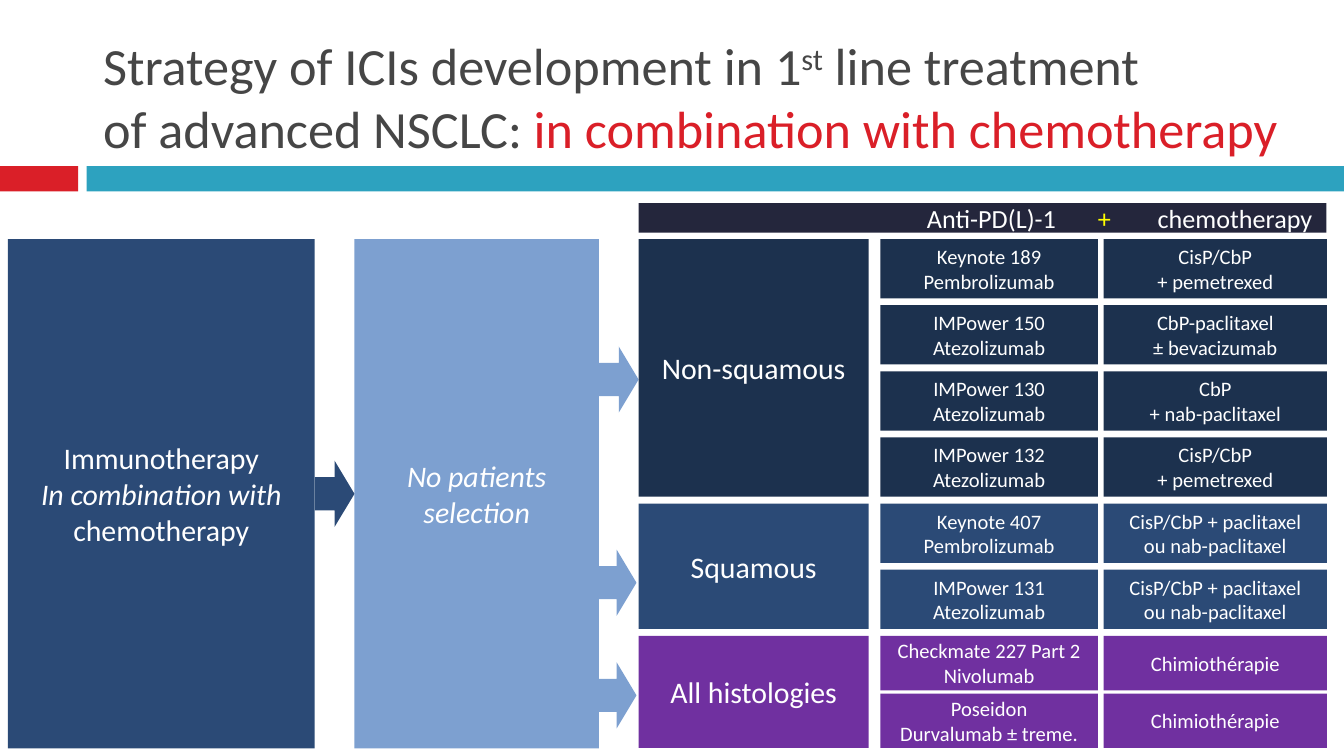
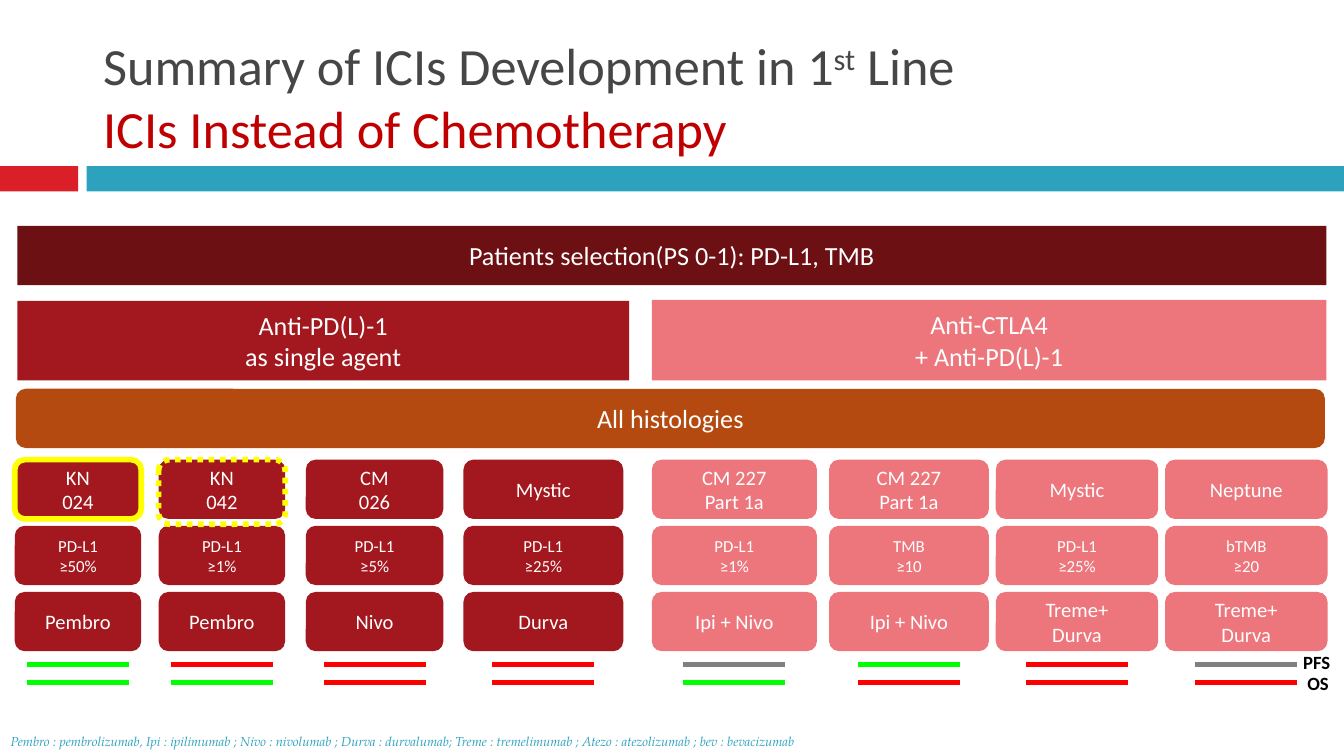
from collections import namedtuple

from lxml.etree import SubElement
from pptx import Presentation
from pptx.dml.color import RGBColor
from pptx.enum.dml import MSO_LINE
from pptx.enum.shapes import MSO_CONNECTOR, MSO_SHAPE as Preset
from pptx.enum.text import MSO_ANCHOR as Anchor, MSO_AUTO_SIZE as AutoSize, PP_ALIGN as Align
from pptx.oxml.ns import qn
from pptx.util import Cm, Pt

Box = namedtuple("Box", "left top width height")
Run = namedtuple("Run", "text color raised", defaults=("title", False))

COLORS = {
    "title": "464646", "red": "DA1F28", "teal": "2DA2BF", "dark_red": "C00000",
    "white": "FFFFFF", "black": "000000", "yellow": "FFFF00",
    "header": "24263C", "navy": "1C314E", "blue": "2B4A76",
    "light_blue": "7DA0D0", "purple": "7030A0", "maroon": "6D1014",
    "crimson": "A3171E", "pink": "EC767C", "orange": "B54A10",
    "positive": "00FF00", "negative": "FF0000", "untested": "808080",
}
FONT = "Calibri"
FOOTNOTE_FONT = "TeX Gyre Pagella"
ROW_HEIGHT = 1.12
ROW_PITCH = 1.25

HISTOLOGIES = [
    ("Non-squamous", "navy", ROW_HEIGHT, ROW_PITCH, [
        ("Keynote 189\nPembrolizumab", "CisP/CbP\n+ pemetrexed"),
        ("IMPower 150\nAtezolizumab", "CbP-paclitaxel\n± bevacizumab"),
        ("IMPower 130\nAtezolizumab", "CbP\n+ nab-paclitaxel"),
        ("IMPower 132\nAtezolizumab", "CisP/CbP\n+ pemetrexed"),
    ]),
    ("Squamous", "blue", ROW_HEIGHT, ROW_PITCH, [
        ("Keynote 407\nPembrolizumab", "CisP/CbP + paclitaxel\nou nab-paclitaxel"),
        ("IMPower 131\nAtezolizumab", "CisP/CbP + paclitaxel\nou nab-paclitaxel"),
    ]),
    ("All histologies", "purple", 1.03, 1.09, [
        ("Checkmate 227 Part 2\nNivolumab", "Chimiothérapie"),
        ("Poseidon\nDurvalumab ± treme.", "Chimiothérapie"),
    ]),
]

TRIALS = [
    (0.28, 2.39, "crimson", "KN\n024", "PD-L1\n≥50%", "Pembro", "positive", "positive"),
    (3.0, 2.39, "crimson", "KN\n042", "PD-L1\n≥1%", "Pembro", "negative", "positive"),
    (5.78, 2.6, "crimson", "CM\n026", "PD-L1\n≥5%", "Nivo", "negative", "negative"),
    (8.76, 3.02, "crimson", "Mystic", "PD-L1\n≥25%", "Durva", "negative", "negative"),
    (12.32, 3.12, "pink", "CM 227\nPart 1a", "PD-L1\n≥1%", "Ipi + Nivo", "untested", "positive"),
    (15.67, 3.02, "pink", "CM 227\nPart 1a", "TMB\n≥10", "Ipi + Nivo", "positive", "negative"),
    (18.82, 3.07, "pink", "Mystic", "PD-L1\n≥25%", "Treme+\nDurva", "negative", "negative"),
    (22.02, 3.07, "pink", "Neptune", "bTMB\n≥20", "Treme+\nDurva", "untested", "negative"),
]


def rgb(name):
    """Return the named colour."""
    return RGBColor.from_string(COLORS[name])


def set_font(font, size, color, name=FONT, bold=False, italic=False):
    """Apply one text style."""
    font.name, font.size = name, Pt(size)
    font.bold, font.italic = bold, italic
    font.color.rgb = rgb(color)


def add_block(slide, box, fill, text="", size=11, preset=Preset.RECTANGLE, italic_lines=()):
    """Add a filled shape with centred white lines of text."""
    shape = slide.shapes.add_shape(preset, *map(Cm, box))
    shape.shadow.inherit = False
    shape.line.fill.background()
    if fill:
        shape.fill.solid()
        shape.fill.fore_color.rgb = rgb(fill)
    else:
        shape.fill.background()
    frame = shape.text_frame
    frame.word_wrap = True
    frame.vertical_anchor = Anchor.MIDDLE
    if text:
        for index, line in enumerate(text.split("\n")):
            paragraph = frame.add_paragraph() if index else frame.paragraphs[0]
            paragraph.text = line
            paragraph.alignment = Align.CENTER
            set_font(paragraph.font, size, "white", italic=index in italic_lines)
    return shape


def add_label(slide, box, text, size, color, wrap=True, **style):
    """Add a one-paragraph text box and return its frame."""
    frame = slide.shapes.add_textbox(*map(Cm, box)).text_frame
    frame.word_wrap = wrap
    frame.paragraphs[0].text = text
    set_font(frame.paragraphs[0].font, size, color, **style)
    return frame


def add_runs(paragraph, runs):
    """Append coloured, optionally superscript runs."""
    for part in runs:
        run = paragraph.add_run()
        run.text = part.text
        run.font.color.rgb = rgb(part.color)
        if part.raised:
            run.font._element.set("baseline", "30000")


def add_heading(slide, box, lines):
    """Add the two-line title and the bands that close the heading."""
    for left, width, color in [(0, 1.48, "red"), (1.64, 23.76, "teal")]:
        add_block(slide, Box(box.left + left, box.top + 3.14, width, 0.48), color)
    frame = add_label(slide, Box(box.left + 1.7, box.top + 0.33, box.width - 2, 2.8),
                      "", 28, "title")
    frame.vertical_anchor = Anchor.BOTTOM
    paragraph = frame.paragraphs[0]
    for index, runs in enumerate(lines):
        if index:
            paragraph.add_line_break()
        add_runs(paragraph, runs)


def add_strategy(slide, box):
    """Add the strategy columns and the arrows leading to the histologies."""
    selection_left = box.left + 6.55
    add_block(slide, Box(box.left, box.top, 5.8, box.height), "blue",
              "Immunotherapy\nIn combination with\nchemotherapy", 16, italic_lines=(1,))
    add_block(slide, Box(selection_left, box.top, 4.62, box.height), "light_blue",
              "No patients selection", 16, italic_lines=(0,))
    arrows = [(5.8, 4.19, "blue"), (11.17, 2.03, "light_blue"),
              (11.13, 5.87, "light_blue"), (11.13, 8.0, "light_blue")]
    for left, top, color in arrows:
        add_block(slide, Box(box.left + left, box.top + top, 0.75, 1.25), color,
                  preset=Preset.RIGHT_ARROW)


def add_combination_header(slide, box):
    """Add the strip naming the two combined treatments."""
    frame = add_block(slide, box, "header").text_frame
    frame.margin_right = 0
    paragraph = frame.paragraphs[0]
    paragraph.alignment = Align.LEFT
    stops = SubElement(paragraph._p.get_or_add_pPr(), qn("a:tabLst"))
    for position in (5.2, 8.43, 9.56):
        SubElement(stops, qn("a:tab"), pos=str(Cm(position)), algn="l")
    set_font(paragraph.font, 14, "white")
    add_runs(paragraph, [Run("\tAnti-PD(L)-1", "white"), Run("\t+", "yellow"),
                         Run("\tchemotherapy", "white")])


def add_histologies(slide, box):
    """Add each histology with its trials and chemotherapies."""
    trial_left, chemotherapy_left = box.left + 4.57, box.left + 8.79
    top = box.top
    for name, color, height, pitch, rows in HISTOLOGIES:
        group_height = pitch * (len(rows) - 1) + height
        add_block(slide, Box(box.left, top, 4.35, group_height), color, name, 16)
        for index, (trial, chemotherapy) in enumerate(rows):
            row_top = top + index * pitch
            add_block(slide, Box(trial_left, row_top, 4.11, height), color, trial)
            add_block(slide, Box(chemotherapy_left, row_top, 4.22, height),
                      color, chemotherapy)
        top += len(rows) * pitch


def add_approaches(slide, box):
    """Add the selection, treatment and histology bars."""
    bars = [
        (0, 0, box.width, 1.12, "maroon", "Patients selection(PS 0-1): PD-L1, TMB", Preset.RECTANGLE),
        (0, 1.42, 11.56, 1.5, "crimson", "Anti-PD(L)-1\nas single agent", Preset.RECTANGLE),
        (11.99, 1.4, 12.75, 1.52, "pink", "Anti-CTLA4\n+ Anti-PD(L)-1", Preset.RECTANGLE),
        (-0.03, 3.08, box.width, 1.12, "orange", "All histologies", Preset.ROUNDED_RECTANGLE),
    ]
    for left, top, width, height, color, text, preset in bars:
        add_block(slide, Box(box.left + left, box.top + top, width, height),
                  color, text, 14, preset)


def add_outcome(slide, left, top, length, color):
    """Add a coloured result line."""
    line = slide.shapes.add_connector(MSO_CONNECTOR.STRAIGHT, Cm(left), Cm(top),
                                      Cm(left + length), Cm(top))
    line.line.color.rgb = rgb(color)
    line.line.width = Pt(3)
    SubElement(line._element.spPr, qn("a:effectLst"))


def add_highlight(slide, box, dash):
    """Add a yellow frame around a trial."""
    frame = add_block(slide, box, None, preset=Preset.ROUNDED_RECTANGLE)
    frame.line.color.rgb = rgb("yellow")
    frame.line.width = Pt(3)
    frame.line.dash_style = dash


def add_trials(slide, box):
    """Add the trial columns with their survival results."""
    length = 1.93
    for left, width, color, trial, marker, drug, progression, survival in TRIALS:
        column_left = box.left + left
        for row, (text, size) in enumerate([(trial, 11), (marker, 9), (drug, 11)]):
            add_block(slide, Box(column_left, box.top + row * ROW_PITCH, width, ROW_HEIGHT),
                      color, text, size, Preset.ROUNDED_RECTANGLE)
        for top, outcome in [(3.87, progression), (4.21, survival)]:
            add_outcome(slide, column_left + (width - length) / 2, box.top + top,
                        length, outcome)
    for trial, height, dash in [(TRIALS[0], ROW_HEIGHT, MSO_LINE.SOLID),
                                (TRIALS[1], 1.22, MSO_LINE.ROUND_DOT)]:
        add_highlight(slide, Box(box.left + trial[0], box.top, trial[1], height), dash)
    for text, left, top, width in [("PFS", 24.38, 3.48, 1.04), ("OS", 24.46, 3.88, 0.91)]:
        frame = add_label(slide, Box(box.left + left, box.top + top, width, 0.68),
                          text, 10, "black", wrap=False, bold=True)
        frame.auto_size = AutoSize.SHAPE_TO_FIT_TEXT


def add_abbreviations(slide, box):
    """Add the footnote explaining the drug abbreviations."""
    frame = add_label(
        slide, box,
        "Pembro : pembrolizumab, Ipi : ipilimumab ; Nivo : nivolumab ; "
        "Durva : durvalumab; Treme : tremelimumab ; Atezo : atezolizumab ; "
        "bev : bevacizumab",
        7, "teal", name=FOOTNOTE_FONT, italic=True)
    frame.vertical_anchor = Anchor.BOTTOM
    frame.margin_left = frame.margin_right = frame.margin_bottom = Cm(0.2)
    frame.margin_top = Cm(0.1)
    frame.paragraphs[0].line_spacing = 0.8


def build_combination_slide(slide, page):
    """Build the slide on immunotherapy combined with chemotherapy."""
    add_heading(slide, page, [
        [Run("Strategy of ICIs development in 1"), Run("st", raised=True),
         Run(" line treatment")],
        [Run("of advanced NSCLC: "), Run("in combination with chemotherapy", "red")],
    ])
    add_strategy(slide, Box(0.15, 4.52, 11.88, 9.63))
    add_combination_header(slide, Box(12.07, 3.84, 13, 0.56))
    add_histologies(slide, Box(12.07, 4.52, 13, 9.63))


def build_replacement_slide(slide, page):
    """Build the slide on immunotherapy replacing chemotherapy."""
    add_heading(slide, page, [
        [Run("Summary of ICIs Development in 1"), Run("st", raised=True), Run(" Line")],
        [Run("ICIs Instead of Chemotherapy", "dark_red")],
    ])
    add_approaches(slide, Box(0.33, 4.27, 24.74, 4.2))
    add_trials(slide, Box(0, 8.69, page.width, 4.56))
    add_abbreviations(slide, Box(0, 13.89, page.width, 0.43))


def main():
    """Create and save the presentation."""
    presentation = Presentation()
    page = Box(0, 0, 25.4, 14.29)
    presentation.slide_width, presentation.slide_height = Cm(page.width), Cm(page.height)
    for build in (build_combination_slide, build_replacement_slide):
        build(presentation.slides.add_slide(presentation.slide_layouts[6]), page)
    presentation.save("out.pptx")


if __name__ == "__main__":
    main()
